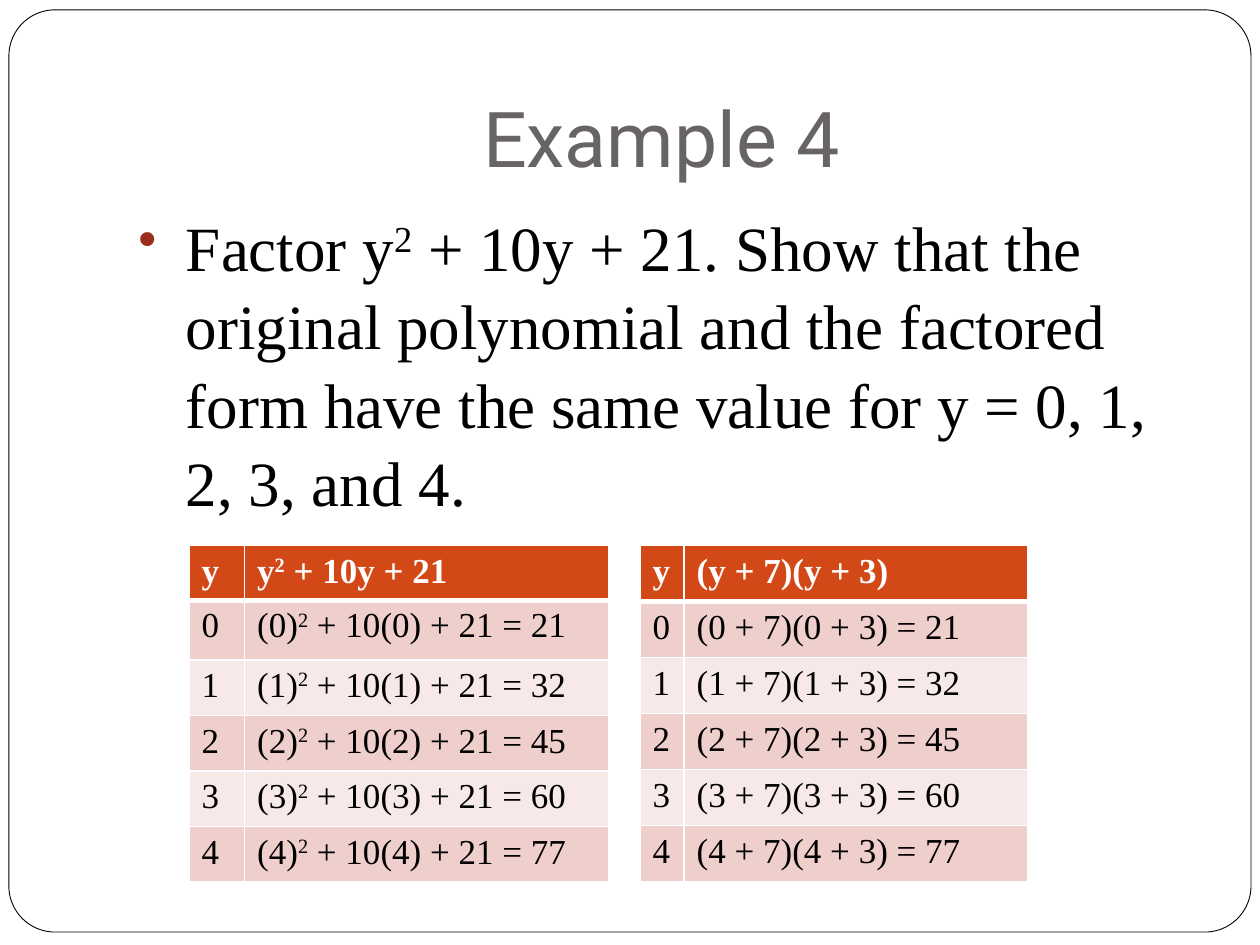
from lxml.etree import SubElement
from pptx import Presentation
from pptx.dml.color import RGBColor
from pptx.enum.shapes import MSO_SHAPE
from pptx.enum.text import MSO_ANCHOR, PP_ALIGN
from pptx.oxml.ns import qn
from pptx.util import Cm, Pt


def rgb(value):
    return RGBColor.from_string(value)


class Deck:
    SERIF, SANS = "Times New Roman", "Roboto"
    BLACK, WHITE, GREY = "000000", "FFFFFF", "696464"
    HEADER, BANDS, BULLET = "D34817", ("EFCFCC", "F7E9E8"), "9B2D1F"

    def __init__(self, prs):
        self.s = prs.slides.add_slide(prs.slide_layouts[6])

    def add_text(self, p, text, size, color, font=SERIF, bold=False):
        """Fill a paragraph; each ² becomes a raised 2."""
        for i, part in enumerate(text.split("²")):
            for piece, raised in (("2", True), (part, False)) if i else ((part, False),):
                r = p.add_run()
                r.text = piece
                r.font.size, r.font.name, r.font.bold = Pt(size), font, bold
                r.font.color.rgb = rgb(color)
                if raised:
                    r.font._element.set("baseline", "30000")

    def frame(self, x, y, w, h, radius):
        sp = self.s.shapes.add_shape(MSO_SHAPE.ROUNDED_RECTANGLE, Cm(x), Cm(y), Cm(w), Cm(h))
        sp.adjustments[0] = radius
        sp.shadow.inherit = False
        sp.fill.solid()
        sp.fill.fore_color.rgb = rgb(self.WHITE)
        sp.line.color.rgb = rgb(self.BLACK)
        sp.line.width = Pt(0.5)

    def textbox(self, x, y, w, h):
        tf = self.s.shapes.add_textbox(Cm(x), Cm(y), Cm(w), Cm(h)).text_frame
        tf.word_wrap = True
        return tf

    def title(self, text, x, y, w, h):
        tf = self.textbox(x, y, w, h)
        tf.vertical_anchor = MSO_ANCHOR.BOTTOM
        tf.margin_bottom = Cm(0.25)
        p = tf.paragraphs[0]
        p.alignment = PP_ALIGN.CENTER
        self.add_text(p, text, 44, self.GREY, self.SANS)

    def bullet(self, text, x, y, w, h):
        p = self.textbox(x, y, w, h).paragraphs[0]
        p.space_before = Pt(3.7)
        p.line_spacing = 1.04
        self.add_text(p, text, 36, self.BLACK)
        pPr = p._p.get_or_add_pPr()
        pPr.set("marL", str(Cm(0.96)))
        pPr.set("indent", str(-Cm(0.96)))
        SubElement(SubElement(pPr, qn("a:buClr")), qn("a:srgbClr"), val=self.BULLET)
        SubElement(pPr, qn("a:buSzPct"), val="85000")
        SubElement(pPr, qn("a:buChar"), char="•")

    def borders(self, cell, **widths):
        tcPr = cell._tc.get_or_add_tcPr()
        for i, side in enumerate(("L", "R", "T", "B")):
            ln = SubElement(tcPr, qn("a:ln" + side), w=str(Pt(widths.get(side, 1))))
            SubElement(SubElement(ln, qn("a:solidFill")), qn("a:srgbClr"), val=self.WHITE)
            tcPr.insert(i, ln)

    def table(self, rows, x, y, col_widths, row_heights):
        tbl = self.s.shapes.add_table(len(rows), len(col_widths), Cm(x), Cm(y),
                                      Cm(sum(col_widths)), Cm(sum(row_heights))).table
        for col, width in zip(tbl.columns, col_widths):
            col.width = Cm(width)
        for i, (row, height) in enumerate(zip(rows, row_heights)):
            tbl.rows[i].height = Cm(height)
            for j, text in enumerate(row):
                cell = tbl.cell(i, j)
                head = i == 0
                self.add_text(cell.text_frame.paragraphs[0], text, 20,
                              self.WHITE if head else self.BLACK, bold=head)
                cell.fill.solid()
                cell.fill.fore_color.rgb = rgb(self.HEADER if head else self.BANDS[(i - 1) % 2])
                self.borders(cell, T=3 if i == 1 else 1, B=3 if head else 1)


def main():
    prs = Presentation()
    prs.slide_width, prs.slide_height = Cm(25.4), Cm(19.05)
    deck = Deck(prs)

    # Frame and heading
    deck.frame(0.18, 0.2, 25.04, 18.59, 0.05)
    deck.title("Example 4", 2.54, 0.76, 21.59, 3.18)

    # Task
    deck.bullet("Factor y² + 10y + 21. Show that the original polynomial and the factored "
                "form have the same value for y = 0, 1, 2, 3, and 4.", 2.54, 4.01, 21.59, 12.7)

    # Values of both forms
    values = [(y, y * y + 10 * y + 21) for y in range(5)]
    original = [("y", "y² + 10y + 21")]
    original += [(str(y), f"({y})² + 10({y}) + 21 = {v}") for y, v in values]
    factored = [("y", "(y + 7)(y + 3)")]
    factored += [(str(y), f"({y} + 7)({y} + 3) = {v}") for y, v in values]
    deck.table(original, 3.81, 11, (1.12, 7.34), [1.1, 1.2] + [1.12] * 4)
    deck.table(factored, 12.9, 11, (0.89, 6.93), [1.13] * 6)

    prs.save("out.pptx")


if __name__ == "__main__":
    main()
